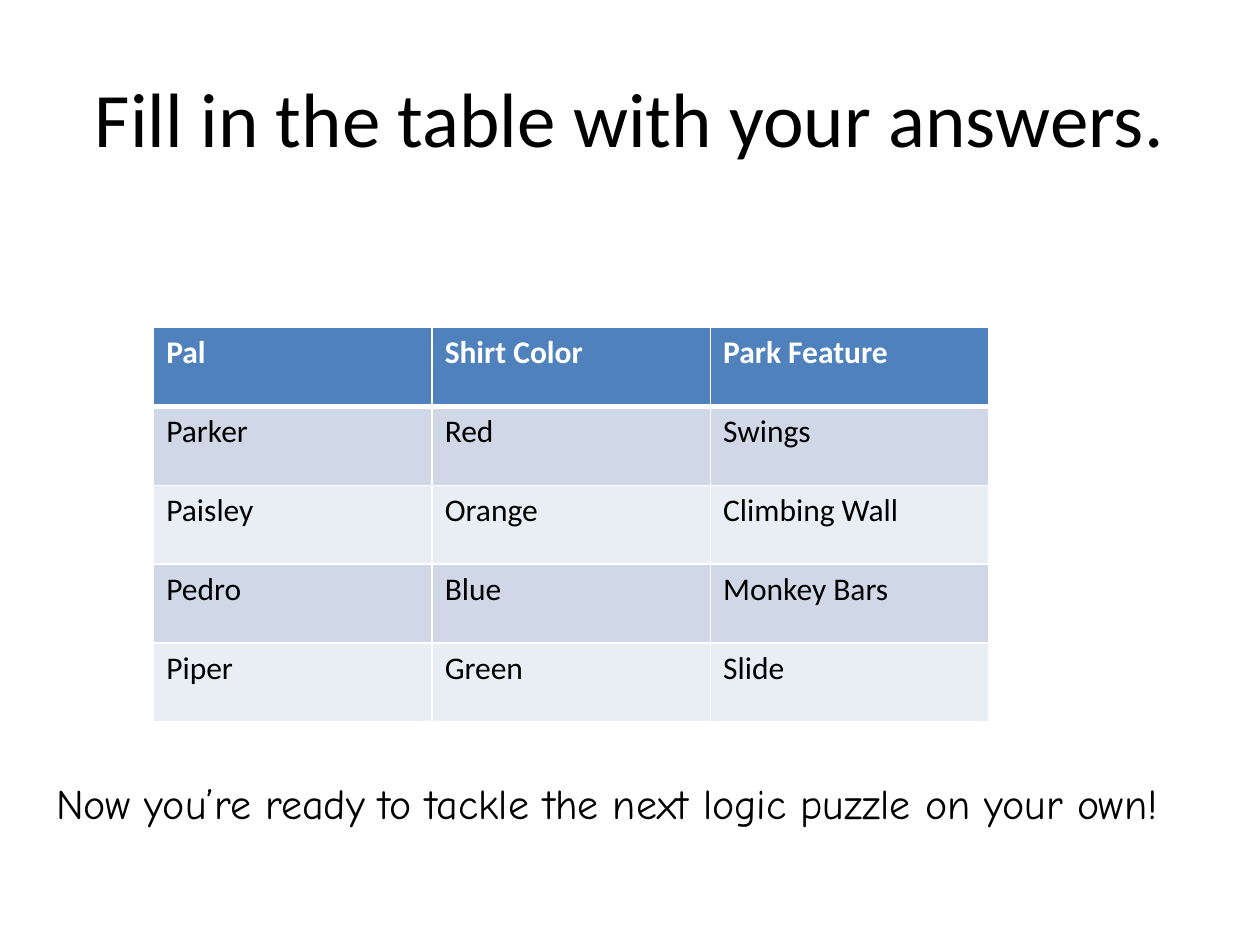
from pptx import Presentation
from pptx.dml.color import RGBColor
from pptx.enum.text import MSO_ANCHOR, PP_ALIGN
from pptx.oxml import parse_xml
from pptx.oxml.ns import nsdecls
from pptx.util import Inches, Pt

CENTER = PP_ALIGN.CENTER
TOP, MIDDLE = MSO_ANCHOR.TOP, MSO_ANCHOR.MIDDLE
BLACK = RGBColor(0x00, 0x00, 0x00)
WHITE = RGBColor(0xFF, 0xFF, 0xFF)
HEADER_BLUE = RGBColor(0x4F, 0x81, 0xBD)
BANDS = [RGBColor(0xD0, 0xD8, 0xE8), RGBColor(0xE9, 0xED, 0xF4)]

ANSWERS = [
    ["Pal", "Shirt Color", "Park Feature"],
    ["Parker", "Red", "Swings"],
    ["Paisley", "Orange", "Climbing Wall"],
    ["Pedro", "Blue", "Monkey Bars"],
    ["Piper", "Green", "Slide"],
]


def add_centered_text(page, text, left, top, width, height, font, size, anchor):
    box = page.shapes.add_textbox(Inches(left), Inches(top), Inches(width), Inches(height))
    frame = box.text_frame
    frame.word_wrap = True
    frame.vertical_anchor = anchor
    para = frame.paragraphs[0]
    para.text = text
    para.alignment = CENTER
    para.font.name = font
    para.font.size = Pt(size)
    para.font.color.rgb = BLACK


def add_border(cell, side, points):
    line = parse_xml(
        f'<a:{side} {nsdecls("a")} w="{Pt(points)}"><a:solidFill>'
        f'<a:srgbClr val="{WHITE}"/></a:solidFill></a:{side}>'
    )
    cell._tc.get_or_add_tcPr().append(line)


deck = Presentation()
deck.slide_width, deck.slide_height = Inches(10), Inches(7.5)
page = deck.slides.add_slide(deck.slide_layouts[6])

# Title
add_centered_text(page, "Fill in the table with your answers.",
                  0.5, 0.3, 9, 1.25, "Calibri", 44, MIDDLE)

# Answer table
table = page.shapes.add_table(len(ANSWERS), len(ANSWERS[0]), Inches(1.22), Inches(2.6),
                              Inches(6.63), Inches(3.13)).table
for row, values in enumerate(ANSWERS):
    header = row == 0
    for column, value in enumerate(values):
        cell = table.cell(row, column)
        # Borders come before the fill in the cell properties
        add_border(cell, "lnL", 1)
        add_border(cell, "lnR", 1)
        add_border(cell, "lnT", 3 if row == 1 else 1)
        add_border(cell, "lnB", 3 if header else 1)
        cell.fill.solid()
        cell.fill.fore_color.rgb = HEADER_BLUE if header else BANDS[(row - 1) % 2]
        para = cell.text_frame.paragraphs[0]
        para.text = value
        para.font.name = "Calibri"
        para.font.size = Pt(18)
        para.font.bold = header
        para.font.color.rgb = WHITE if header else BLACK

# Closing line
add_centered_text(page, "Now you’re ready to tackle the next logic puzzle on your own!",
                  0.29, 6.12, 9.05, 0.91, "Comic Neue", 24, TOP)

deck.save("out.pptx")
